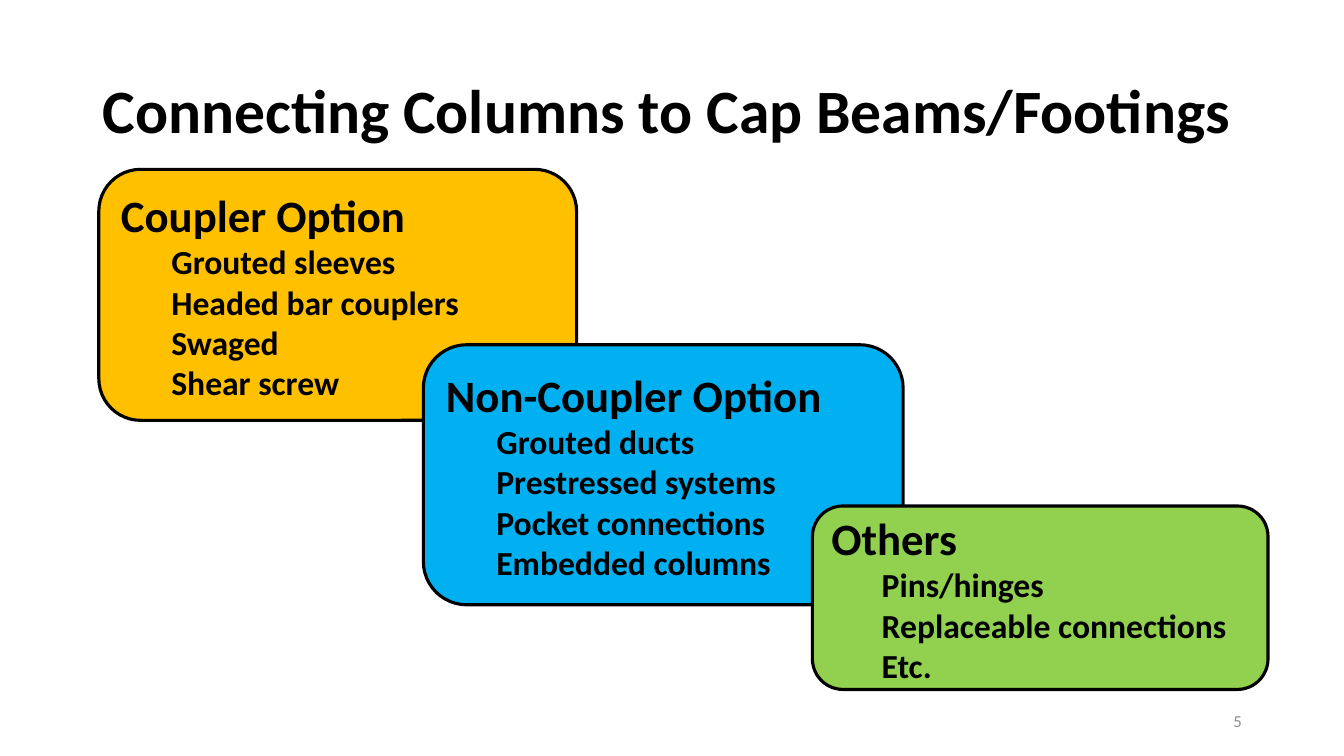
from pptx import Presentation
from pptx.dml.color import RGBColor
from pptx.enum.shapes import MSO_SHAPE
from pptx.enum.text import MSO_ANCHOR, PP_ALIGN
from pptx.util import Inches, Pt

ROUNDED = MSO_SHAPE.ROUNDED_RECTANGLE
MIDDLE = MSO_ANCHOR.MIDDLE
LEFT, RIGHT = PP_ALIGN.LEFT, PP_ALIGN.RIGHT

COLORS = {
    "black": "000000",
    "gray": "8C8C8C",
    "amber": "FFC000",
    "blue": "00B0F0",
    "green": "92D050",
}

# Heading, items, fill, place (left, top, width, height in percent of the slide)
OPTIONS = [
    ("Coupler Option",
     ["Grouted sleeves", "Headed bar couplers", "Swaged", "Shear screw"],
     "amber", (7.35, 22.4, 35.55, 33.2)),
    ("Non-Coupler Option",
     ["Grouted ducts", "Prestressed systems", "Pocket connections", "Embedded columns"],
     "blue", (31.5, 45.6, 35.7, 34.4)),
    ("Others",
     ["Pins/hinges", "Replaceable connections", "Etc."],
     "green", (60.45, 66.93, 33.9, 24.27)),
]


def color(name):
    return RGBColor.from_string(COLORS[name])


def write(para, text, size, ink="black", bold=True, align=LEFT, indent=0, spacing=1.0):
    para.alignment = align
    para.line_spacing = spacing
    para._p.get_or_add_pPr().set("marL", str(Inches(indent)))
    span = para.add_run()
    span.text = text
    span.font.name = "Calibri"
    span.font.size = Pt(size)
    span.font.bold = bold
    span.font.color.rgb = color(ink)


class SlideBuilder:
    """Draws on one page; places are percentages of its width and height."""

    def __init__(self, deck):
        self.deck = deck
        self.page = deck.slides.add_slide(deck.slide_layouts[6])

    def place(self, left, top, width, height):
        across, down = self.deck.slide_width / 100, self.deck.slide_height / 100
        return [round(length) for length in
                (left * across, top * down, width * across, height * down)]

    def frame(self, shape):
        frame = shape.text_frame
        frame.word_wrap = True
        frame.vertical_anchor = MIDDLE
        return frame

    def label(self, text, place, **style):
        box = self.page.shapes.add_textbox(*self.place(*place))
        write(self.frame(box).paragraphs[0], text, **style)

    def option(self, heading, items, fill, place):
        card = self.page.shapes.add_shape(ROUNDED, *self.place(*place))
        card.shadow.inherit = False
        card.fill.solid()
        card.fill.fore_color.rgb = color(fill)
        card.line.color.rgb = color("black")
        card.line.width = Pt(2.25)
        frame = self.frame(card)
        write(frame.paragraphs[0], heading, size=32)
        for item in items:
            write(frame.add_paragraph(), item, size=24, indent=0.5)


def main():
    deck = Presentation()
    deck.slide_width, deck.slide_height = Inches(13.33), Inches(7.5)
    slide = SlideBuilder(deck)
    slide.label("Connecting Columns to Cap Beams/Footings",
                (6.9, 5.33, 86.25, 19.33), size=44, spacing=0.9)
    for option in OPTIONS:
        slide.option(*option)
    slide.label("5", (70.65, 92.67, 22.5, 5.33),
                size=12, ink="gray", bold=False, align=RIGHT)
    deck.save("out.pptx")


if __name__ == "__main__":
    main()
